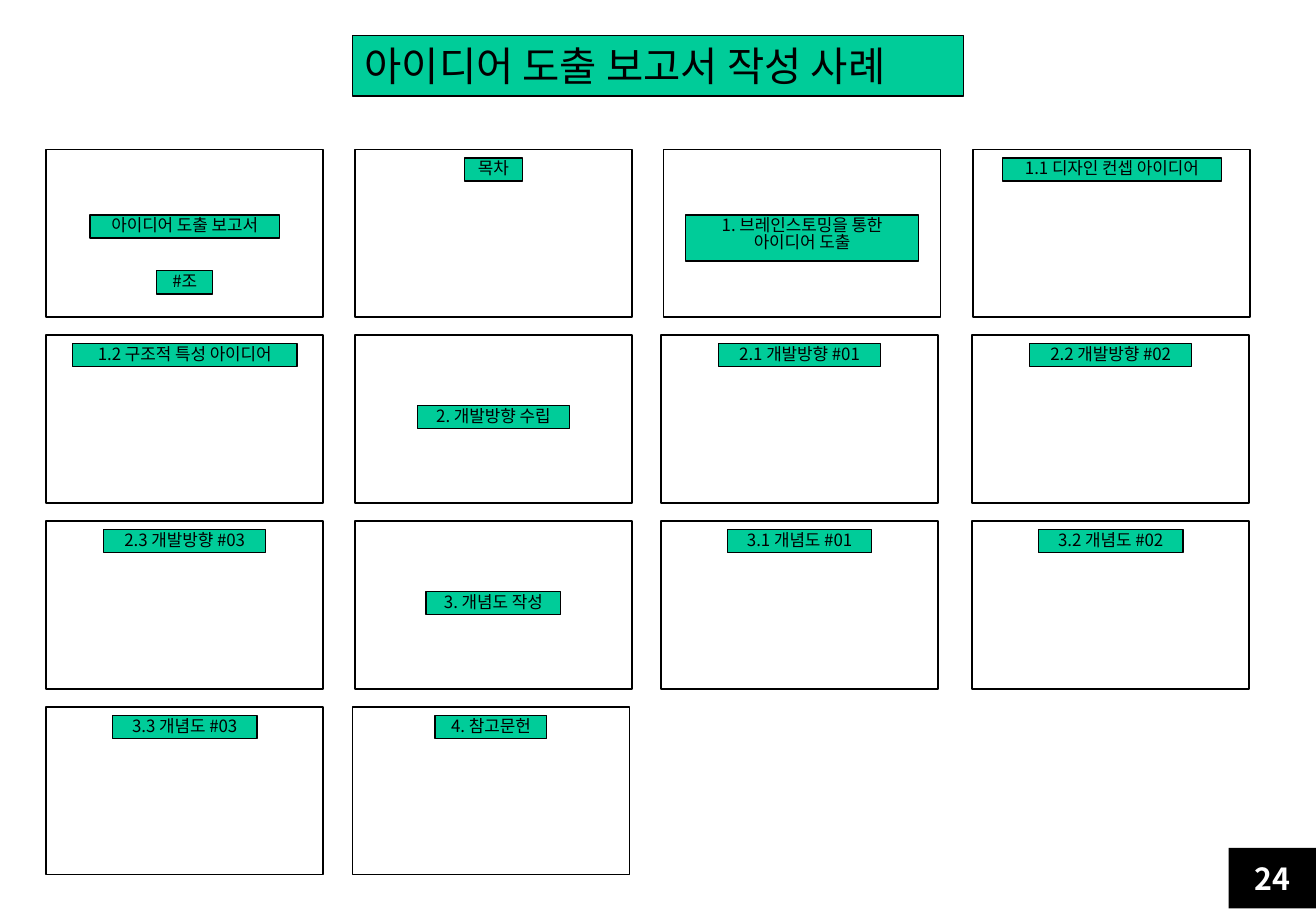
from dataclasses import dataclass

import pptx
import pptx.dml.color
import pptx.enum.shapes
import pptx.enum.text
import pptx.util
from pptx.util import Inches

BLACK = pptx.dml.color.RGBColor(0x00, 0x00, 0x00)
WHITE = pptx.dml.color.RGBColor(0xFF, 0xFF, 0xFF)
GREEN = pptx.dml.color.RGBColor(0x00, 0xCC, 0x99)
FONT = "Noto Sans CJK KR"

ALIGN = pptx.enum.text.PP_ALIGN
ANCHOR = pptx.enum.text.MSO_ANCHOR
FIT = pptx.enum.text.MSO_AUTO_SIZE

CARD_WIDTH, CARD_HEIGHT = 2.28, 1.38
FIRST_ROW_TOP, ROW_STEP = 1.23, 1.53
COLUMN_LEFTS = [
    [0.38, 2.92, 5.46, 8.01],
    [0.38, 2.92, 5.44, 8.0],
    [0.38, 2.92, 5.44, 8.0],
    [0.38, 2.9],
]
LINE_HEIGHT = 0.19
HEADER, COVER, DIVIDER, TEAM = 0.07, 0.54, 0.58, 1.0


@dataclass(frozen=True)
class Label:
    text: str
    width: float
    offset: float = HEADER


CARD_ROWS = [
    [
        [Label("아이디어 도출 보고서", 1.56, COVER), Label("#조", 0.46, TEAM)],
        [Label("목차", 0.48)],
        [Label("1. 브레인스토밍을 통한\n아이디어 도출", 1.92, COVER)],
        [Label("1.1 디자인 컨셉 아이디어", 1.8)],
    ],
    [
        [Label("1.2 구조적 특성 아이디어", 1.85)],
        [Label("2. 개발방향 수립", 1.25, DIVIDER)],
        [Label("2.1 개발방향 #01", 1.33)],
        [Label("2.2 개발방향 #02", 1.33)],
    ],
    [
        [Label("2.3 개발방향 #03", 1.33)],
        [Label("3. 개념도 작성", 1.11, DIVIDER)],
        [Label("3.1 개념도 #01", 1.19)],
        [Label("3.2 개념도 #02", 1.19)],
    ],
    [
        [Label("3.3 개념도 #03", 1.19)],
        [Label("4. 참고문헌", 0.92)],
    ],
]


def paint(shape, fill: pptx.dml.color.RGBColor, line_width: float = 0) -> None:
    """Fill a shape and outline it in black, or leave it without a line."""
    shape.fill.solid()
    shape.fill.fore_color.rgb = fill
    if line_width:
        shape.line.color.rgb = BLACK
        shape.line.width = pptx.util.Pt(line_width)
    else:
        shape.line.fill.background()


def add_box(slide, left: float, top: float, width: float, height: float,
            fill: pptx.dml.color.RGBColor, line_width: float = 0):
    box = slide.shapes.add_shape(
        pptx.enum.shapes.MSO_SHAPE.RECTANGLE,
        Inches(left), Inches(top), Inches(width), Inches(height))
    box.shadow.inherit = False
    paint(box, fill, line_width)
    return box


def write(shape, text: str, *, size: float, color=BLACK, bold: bool = False,
          align=ALIGN.CENTER, anchor=ANCHOR.MIDDLE, wrap: bool = True,
          fit=FIT.NONE, inset: float = 0.05, next_spacing: float = 1) -> None:
    """Write one paragraph per line; next_spacing applies after the first."""
    frame = shape.text_frame
    frame.text = text
    frame.word_wrap = wrap
    frame.auto_size = fit
    frame.vertical_anchor = anchor
    frame.margin_left = frame.margin_right = Inches(0.1)
    frame.margin_top = frame.margin_bottom = Inches(inset)
    for index, para in enumerate(frame.paragraphs):
        para.alignment = align
        if index:
            para.line_spacing = next_spacing
        for span in para.runs:
            span.font.name = FONT
            span.font.size = pptx.util.Pt(size)
            span.font.bold = bold
            span.font.color.rgb = color
            east_asian = span.font._element.makeelement(
                pptx.oxml.ns.qn("a:ea"), {"typeface": FONT})
            span.font._element.find(pptx.oxml.ns.qn("a:latin")).addnext(east_asian)


def add_card(slide, left: float, top: float, labels: list[Label]) -> None:
    add_box(slide, left, top, CARD_WIDTH, CARD_HEIGHT, WHITE, 1)
    for label in labels:
        lines = label.text.count("\n") + 1
        box = add_box(slide, left + (CARD_WIDTH - label.width) / 2,
                      top + label.offset, label.width, lines * LINE_HEIGHT,
                      GREEN, 0.75)
        write(box, label.text, size=10, anchor=ANCHOR.TOP, inset=0,
              wrap=lines > 1, next_spacing=0.82,
              fit=FIT.NONE if lines > 1 else FIT.SHAPE_TO_FIT_TEXT)


def main() -> None:
    deck = pptx.Presentation()
    deck.slide_width, deck.slide_height = Inches(10.83), Inches(7.5)
    slide = deck.slides.add_slide(deck.slide_layouts.get_by_name("Title Only"))

    title = slide.shapes.title
    title.left, title.top = Inches(2.9), Inches(0.29)
    title.width, title.height = Inches(5.03), Inches(0.5)
    paint(title, GREEN, 0.75)
    write(title, "아이디어 도출 보고서 작성 사례", size=24, align=ALIGN.LEFT)

    for row, (lefts, cards) in enumerate(zip(COLUMN_LEFTS, CARD_ROWS)):
        for left, labels in zip(lefts, cards):
            add_card(slide, left, FIRST_ROW_TOP + row * ROW_STEP, labels)

    page_number = add_box(slide, 10.11, 6.98, 0.72, 0.5, BLACK)
    write(page_number, "24", size=18, color=WHITE, bold=True)

    deck.save("out.pptx")


if __name__ == "__main__":
    main()
